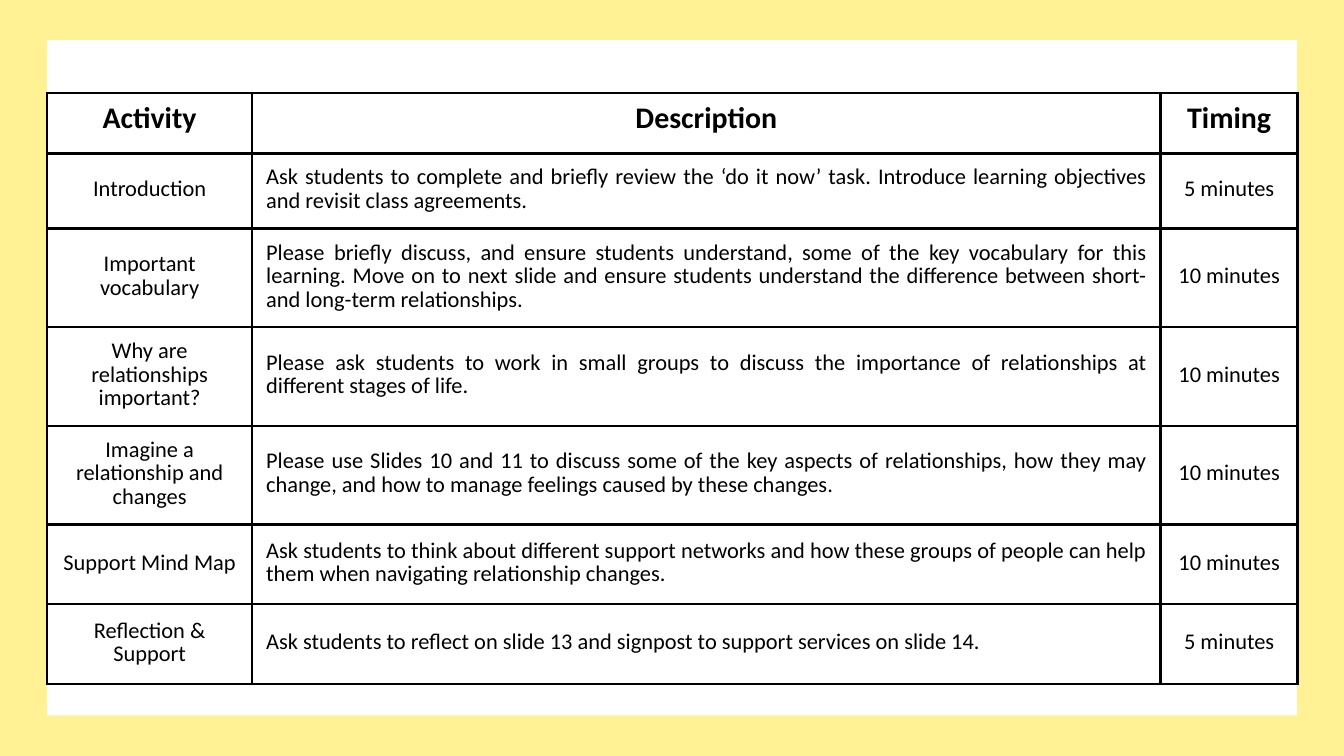
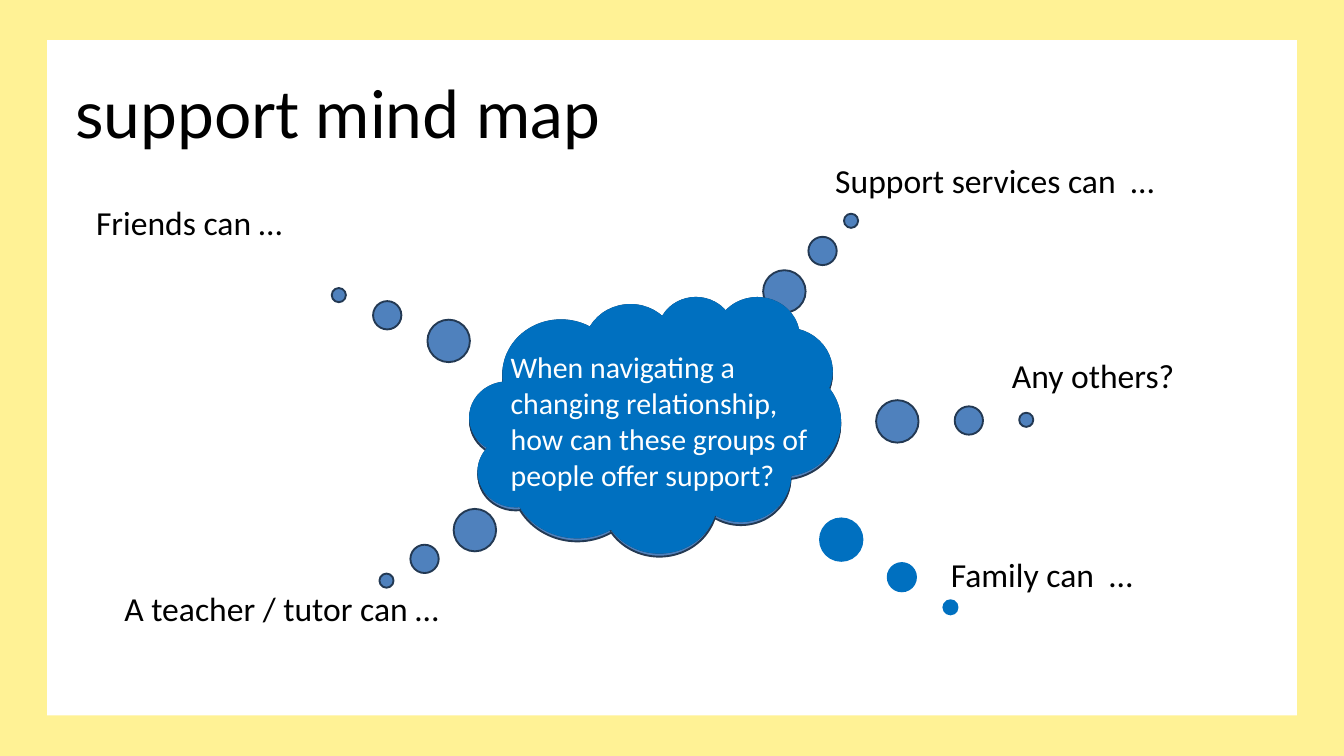
"""Build a lesson plan table slide and a support mind map slide."""
from lxml import etree
from pptx import Presentation
from pptx import util as u
from pptx.dml.color import RGBColor
from pptx.enum import shapes, text
from pptx.oxml import ns

YELLOW = RGBColor(0xFF, 0xF2, 0x95)
WHITE = RGBColor(0xFF, 0xFF, 0xFF)
BLACK = RGBColor(0x00, 0x00, 0x00)
STEEL = RGBColor(0x4F, 0x81, 0xBD)
NAVY = RGBColor(0x23, 0x39, 0x53)
BLUE = RGBColor(0x00, 0x70, 0xC0)
BODY_FONT = "Calibri"
TITLE_FONT = "Lato"


def write(frame, wording, size, color=BLACK, font=BODY_FONT, bold=False):
    frame.word_wrap = True
    paragraph = frame.paragraphs[0]
    run = paragraph.add_run()
    run.text = wording
    run.font.size = u.Pt(size)
    run.font.name = font
    run.font.bold = bold
    run.font.color.rgb = color
    return paragraph


def add_label(slide, wording, left, top, width, height, size, color=BLACK):
    box = slide.shapes.add_textbox(u.Cm(left), u.Cm(top), u.Cm(width), u.Cm(height))
    write(box.text_frame, wording, size, color)
    box.text_frame.auto_size = text.MSO_AUTO_SIZE.SHAPE_TO_FIT_TEXT


deck = Presentation()
deck.slide_width = u.Cm(50.8)
deck.slide_height = u.Cm(28.58)
deck.slide_master.background.fill.solid()
deck.slide_master.background.fill.fore_color.rgb = YELLOW

title_only, blank = deck.slide_layouts[5], deck.slide_layouts[6]
plan_slide = deck.slides.add_slide(blank)
map_slide = deck.slides.add_slide(title_only)

for slide in (plan_slide, map_slide):
    panel = slide.shapes.add_shape(
        shapes.MSO_SHAPE.RECTANGLE, u.Cm(1.78), u.Cm(1.52), u.Cm(47.24), u.Cm(25.53))
    panel.shadow.inherit = False
    panel.fill.solid()
    panel.fill.fore_color.rgb = WHITE
    panel.line.fill.background()
    slide.shapes._spTree.insert(2, panel._element)

ACTIVITIES = [
    ("Activity", "Description", "Timing"),
    ("Introduction",
     "Ask students to complete and briefly review the ‘do it now’ task. "
     "Introduce learning objectives and revisit class agreements.",
     "5 minutes"),
    ("Important vocabulary",
     "Please briefly discuss, and ensure students understand, some of the key vocabulary "
     "for this learning. Move on to next slide and ensure students understand the "
     "difference between short- and long-term relationships.",
     "10 minutes"),
    ("Why are relationships important?",
     "Please ask students to work in small groups to discuss the importance of "
     "relationships at different stages of life.",
     "10 minutes"),
    ("Imagine a relationship and changes",
     "Please use Slides 10 and 11 to discuss some of the key aspects of relationships, "
     "how they may change, and how to manage feelings caused by these changes.",
     "10 minutes"),
    ("Support Mind Map",
     "Ask students to think about different support networks and how these groups of "
     "people can help them when navigating relationship changes.",
     "10 minutes"),
    ("Reflection & Support",
     "Ask students to reflect on slide 13 and signpost to support services on slide 14.",
     "5 minutes"),
]
COLUMN_WIDTHS = [7.75, 34.34, 5.18]
ROW_HEIGHTS = [2.29, 2.01, 2.11, 2.79, 2.11, 3.02, 3.02]
PLAN_HEIGHT = u.Cm(22.28)

plan_frame = plan_slide.shapes.add_table(
    len(ACTIVITIES), len(COLUMN_WIDTHS), u.Cm(1.78), u.Cm(3.51),
    u.Cm(sum(COLUMN_WIDTHS)), PLAN_HEIGHT)
plan = plan_frame.table
plan.first_row = False
plan.horz_banding = False
for column, width in zip(plan.columns, COLUMN_WIDTHS):
    column.width = u.Cm(width)
for row, height in zip(plan.rows, ROW_HEIGHTS):
    row.height = u.Cm(height)
plan_frame.height = PLAN_HEIGHT

for row_index, activity in enumerate(ACTIVITIES):
    is_header = row_index == 0
    for column_index, wording in enumerate(activity):
        cell = plan.cell(row_index, column_index)
        cell.margin_left = cell.margin_right = u.Cm(0.53)
        cell.margin_top = cell.margin_bottom = u.Cm(0.53)
        cell.vertical_anchor = text.MSO_ANCHOR.MIDDLE
        paragraph = write(cell.text_frame, wording, 32 if is_header else 24, bold=is_header)
        paragraph.line_spacing = u.Pt(28 if is_header else 25.2)
        is_description = column_index == 1 and not is_header
        paragraph.alignment = text.PP_ALIGN.JUSTIFY if is_description else text.PP_ALIGN.CENTER
        properties = cell._tc.get_or_add_tcPr()
        for side in ("a:lnL", "a:lnR", "a:lnT", "a:lnB"):
            border = etree.SubElement(properties, ns.qn(side), w=str(u.Pt(3)))
            border_fill = etree.SubElement(border, ns.qn("a:solidFill"))
            etree.SubElement(border_fill, ns.qn("a:srgbClr"), val=str(BLACK))
        cell.fill.background()

heading = map_slide.shapes.title
heading.left, heading.top = u.Cm(2.84), u.Cm(3.1)
heading.width, heading.height = u.Cm(41.17), u.Cm(2.72)
heading_frame = heading.text_frame
heading_frame.margin_left = heading_frame.margin_right = 0
heading_frame.margin_top = heading_frame.margin_bottom = 0
heading_frame.vertical_anchor = text.MSO_ANCHOR.TOP
heading_frame.auto_size = text.MSO_AUTO_SIZE.SHAPE_TO_FIT_TEXT
heading_line = write(heading_frame, "support mind map", 70.6, font=TITLE_FONT)
heading_line.alignment = text.PP_ALIGN.LEFT
heading_line.line_spacing = u.Pt(74.2)

THOUGHT_TRAILS = [
    (11.33, -0.727, 0.603, STEEL, NAVY),
    (11.33, -0.856, -0.518, STEEL, NAVY),
    (11.38, 0.53, -0.815, STEEL, NAVY),
    (11.23, 1.004, -0.018, STEEL, NAVY),
    (11.23, 0.799, 0.718, BLUE, BLUE),
]
for top, tip_x, tip_y, fill_color, line_color in THOUGHT_TRAILS:
    cloud = map_slide.shapes.add_shape(
        shapes.MSO_SHAPE.CLOUD_CALLOUT, u.Cm(17.78), u.Cm(top), u.Cm(13.97), u.Cm(9.63))
    cloud.shadow.inherit = False
    cloud.adjustments[0] = tip_x
    cloud.adjustments[1] = tip_y
    cloud.fill.solid()
    cloud.fill.fore_color.rgb = fill_color
    cloud.line.color.rgb = line_color
    cloud.line.width = u.Pt(2)

add_label(map_slide,
          "When navigating a changing relationship, how can these groups of people offer support?",
          19.05, 13.06, 12.7, 5.74, 32, WHITE)

SUPPORTERS = [
    ("Friends can …", 3.38, 7.52, 12.07),
    ("A teacher / tutor can …", 4.45, 22.12, 13.97),
    ("Family can  …", 35.69, 20.8, 12.07),
    ("Support services can  …", 31.32, 5.92, 13.77),
    ("Any others?", 38, 13.28, 12.07),
]
for wording, left, top, width in SUPPORTERS:
    add_label(map_slide, wording, left, top, width, 1.8, 36)

deck.save("out.pptx")
